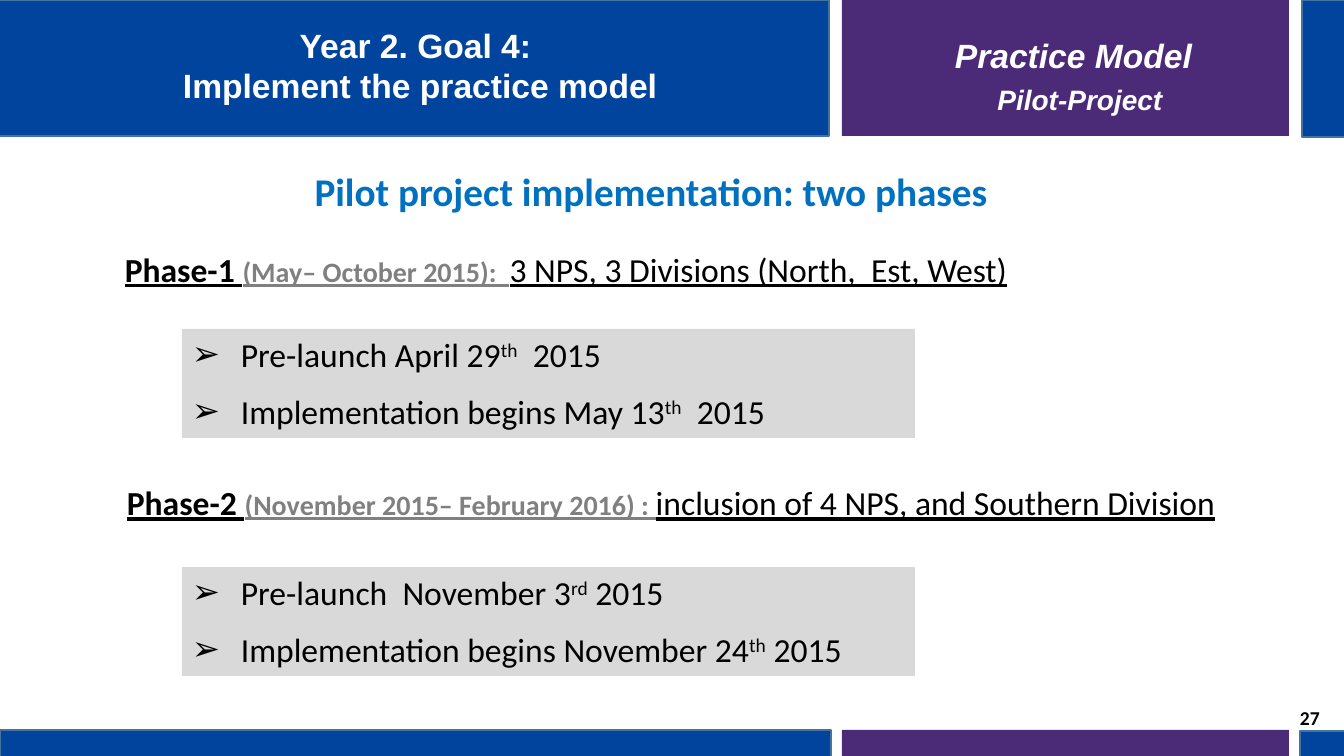
from lxml import etree
from pptx import Presentation
from pptx.dml.color import RGBColor
from pptx.enum.shapes import MSO_SHAPE
from pptx.enum.text import MSO_ANCHOR, MSO_AUTO_SIZE, PP_ALIGN
from pptx.oxml.ns import qn
from pptx.util import Emu, Pt

RECT = MSO_SHAPE.RECTANGLE
TOP = MSO_ANCHOR.TOP
GROW = MSO_AUTO_SIZE.SHAPE_TO_FIT_TEXT
LEFT, MID = PP_ALIGN.LEFT, PP_ALIGN.CENTER

WIDE, HIGH = 1344, 756
PX = 914400 / 100.8

HEX = {"blue": "00449E", "edge": "43739E", "plum": "4B2A78", "sky": "0070C0",
       "white": "FFFFFF", "black": "000000", "gray": "808080", "pale": "D9D9D9"}

# left, top, width, height, fill, line
BARS = [
    (0, 730, 831, 28, "blue", "edge"),
    (1300, 731, 45, 27, "blue", "edge"),
    (842, 730, 447, 28, "plum", None),
    (-2, 0, 831, 136, "blue", "edge"),
    (1302, 0, 45, 137, "blue", "edge"),
    (842, 0, 447, 136, "plum", None),
]

# box, alignment, size, font, colour, italic, lines
LABELS = [
    ((50, 162, 1202, 57), MID, 28, "Calibri", "sky", False,
     ["Pilot project implementation: two phases"]),
    ((14, 20, 803, 92), MID, 24, "Arial", "white", False,
     ["Year 2. Goal 4:", " Implement the practice model"]),
    ((963, 78, 234, 44), MID, 20, "Arial", "white", True, ["Pilot-Project"]),
    ((915, 30, 317, 50), MID, 24, "Arial", "white", True, ["Practice Model"]),
    ((1290, 701, 44, 34), LEFT, 14, "Calibri", "black", False, ["27"]),
]

# heading box, heading parts, list top, steps as (text, raised, text)
PHASES = [
    ((110, 244, 912, 50),
     ("Phase-1 ", "(May– October 2015):  ", "3 NPS, 3 Divisions (North,  Est, West)"),
     329,
     [("Pre-launch April 29", "th", "  2015"),
      ("Implementation begins May 13", "th", "  2015")]),
    ((107, 477, 1128, 50),
     ("Phase-2 ", "(November 2015– February 2016) : ",
      "inclusion of 4 NPS, and Southern Division"),
     567,
     [("Pre-launch  November 3", "rd", " 2015"),
      ("Implementation begins November 24", "th", " 2015")]),
]
HEAD = [(24, "black", True), (20, "gray", True), (24, "black", False)]
LIST_X, LIST_W, LIST_H, INDENT = 182, 733, 109, 49


def emu(*vals):
    return [Emu(round(v * PX)) for v in vals]


def rgb(name):
    return RGBColor.from_string(HEX[name])


def add_run(para, text, size, font, color, bold=False):
    run = para.add_run()
    run.text = text
    run.font.size = Pt(size)
    run.font.name = font
    run.font.bold = bold
    run.font.color.rgb = rgb(color)
    return run


def add_bar(slide, box, fill, line=None):
    bar = slide.shapes.add_shape(RECT, *emu(*box))
    bar.shadow.inherit = False
    bar.fill.solid()
    bar.fill.fore_color.rgb = rgb(fill)
    if line:
        bar.line.color.rgb = rgb(line)
        bar.line.width = Pt(1)
    else:
        bar.line.fill.background()
    return bar


def add_box(slide, box, align, wrap=True):
    """Add a text box and return its first paragraph."""
    frame = slide.shapes.add_textbox(*emu(*box)).text_frame
    frame.auto_size = GROW
    frame.word_wrap = wrap
    para = frame.paragraphs[0]
    para.alignment = align
    return para


def add_list(slide, top, steps):
    frame = add_bar(slide, (LIST_X, top, LIST_W, LIST_H), "pale").text_frame
    frame.word_wrap = True
    frame.vertical_anchor = TOP
    dent = emu(INDENT)[0]
    for i, step in enumerate(steps):
        para = frame.add_paragraph() if i else frame.paragraphs[0]
        para.alignment = LEFT
        para.space_after = Pt(12)
        props = para._p.get_or_add_pPr()
        props.set("marL", str(dent))
        props.set("indent", str(-dent))
        etree.SubElement(props, qn("a:buFont"), typeface="Arial")
        etree.SubElement(props, qn("a:buChar"), char="➢")
        runs = [add_run(para, part, 24, "Calibri", "black") for part in step]
        runs[1].font._element.set("baseline", "30000")


def main():
    deck = Presentation()
    deck.slide_width, deck.slide_height = emu(WIDE, HIGH)
    slide = deck.slides.add_slide(deck.slide_layouts[6])

    for *box, fill, line in BARS:
        add_bar(slide, box, fill, line)

    for box, align, size, font, color, slant, lines in LABELS:
        para = add_box(slide, box, align)
        for i, text in enumerate(lines):
            if i:
                para.add_line_break()
            add_run(para, text, size, font, color, True).font.italic = slant

    for box, parts, top, steps in PHASES:
        para = add_box(slide, box, MID, wrap=False)
        for text, (size, color, bold) in zip(parts, HEAD):
            add_run(para, text, size, "Calibri", color, bold).font.underline = True
        add_list(slide, top, steps)

    deck.save("out.pptx")


if __name__ == "__main__":
    main()
